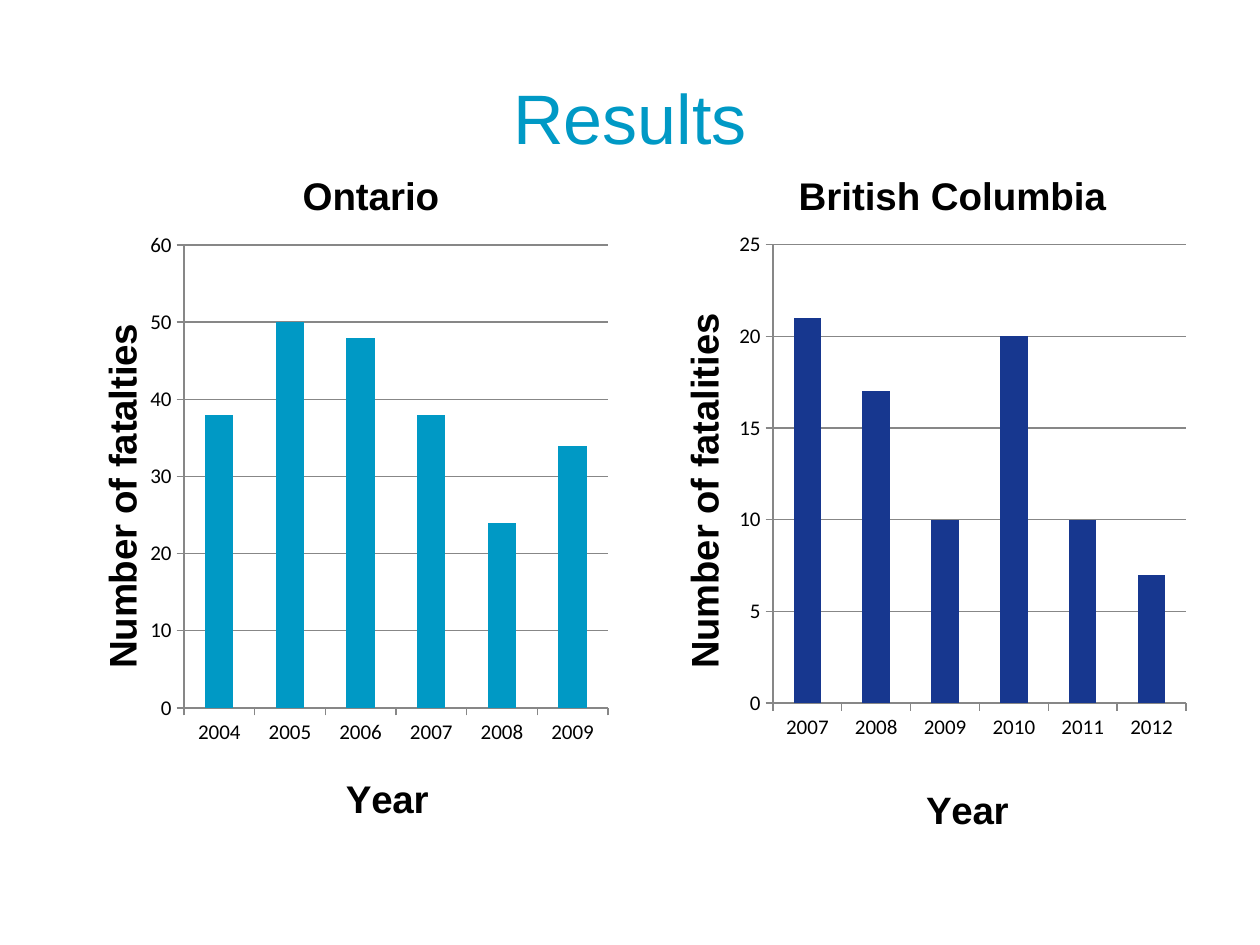
from dataclasses import dataclass
from lxml.etree import SubElement
from pptx import Presentation
from pptx.chart.data import CategoryChartData
from pptx.dml.color import RGBColor as RGB
from pptx.enum.chart import XL_CHART_TYPE as CT, XL_TICK_MARK as TICK
from pptx.enum.text import MSO_ANCHOR as ANCHOR, PP_ALIGN as ALIGN
from pptx.oxml.ns import qn
from pptx.util import Emu, Pt


@dataclass(frozen=True)
class Theme:
    cyan: RGB = RGB(0x00, 0x99, 0xC5)
    navy: RGB = RGB(0x17, 0x37, 0x8F)
    black: RGB = RGB(0, 0, 0)
    grey: RGB = RGB(0x87, 0x87, 0x87)
    heading_font: str = "Arial"
    chart_font: str = "Calibri"
    title_size: int = 40
    heading_size: int = 22
    tick_size: int = 12


THEME = Theme()
TITLE = ("Results", (63, 38, 1134, 158))
CHARTS = [
    dict(heading="Ontario", heading_box=(234, 165, 274, 60), color=THEME.cyan,
         left=63, first_year=2004, values=[38, 50, 48, 38, 24, 34],
         top_value=60, step=10, y_title="Number of fatalties",
         plot=(184, 245, 424, 463), x_title_at=(339, 768), y_title_at=(91, 317)),
    dict(heading="British Columbia", heading_box=(674, 165, 557, 60), color=THEME.navy,
         left=640, first_year=2007, values=[21, 17, 10, 20, 10, 7],
         top_value=25, step=5, y_title="Number of fatalities",
         plot=(773, 245, 413, 463), x_title_at=(919, 785), y_title_at=(673, 311)),
]
CHART_TOP, CHART_W, CHART_H = 220, 557, 624


def px(n):
    return Emu(round(n * 914400 / 126))


def style(font, size, color, bold=False, name=THEME.heading_font):
    font.name, font.size, font.bold = name, Pt(size), bold
    font.color.rgb = color


def add_text(slide, text, box, size, color, bold=False):
    tf = slide.shapes.add_textbox(*map(px, box)).text_frame
    tf.word_wrap = True
    tf.vertical_anchor = ANCHOR.MIDDLE
    p = tf.paragraphs[0]
    p.text, p.alignment = text, ALIGN.CENTER
    style(p.font, size, color, bold)


def set_layout(parent, index, left, box):
    for old in parent.findall(qn("c:layout")):
        parent.remove(old)
    layout = SubElement(parent, qn("c:layout"))
    parent.insert(index, layout)
    manual = SubElement(layout, qn("c:manualLayout"))
    items = [("layoutTarget", "inner")] if len(box) == 4 else []
    items += [("xMode", "edge"), ("yMode", "edge")]
    fractions = [(box[0] - left) / CHART_W, (box[1] - CHART_TOP) / CHART_H]
    if len(box) == 4:
        fractions += [box[2] / CHART_W, box[3] / CHART_H]
    items += zip("xywh", (f"{f:.4f}" for f in fractions))
    for tag, val in items:
        SubElement(manual, qn(f"c:{tag}")).set("val", val)


def style_axis(axis, title, left, title_at):
    axis.major_tick_mark, axis.minor_tick_mark = TICK.OUTSIDE, TICK.NONE
    style(axis.tick_labels.font, THEME.tick_size, THEME.black, name=THEME.chart_font)
    axis.format.line.color.rgb = THEME.grey
    axis.format.line.width = Pt(0.75)
    tf = axis.axis_title.text_frame
    p = tf.paragraphs[0]
    p.text = title
    style(p.font, THEME.heading_size, THEME.black, True)
    style(p.runs[0].font, THEME.heading_size, THEME.black, True)
    set_layout(axis.axis_title._element, 1, left, title_at)
    return tf


def add_bars(slide, c):
    data = CategoryChartData()
    data.categories = [str(c["first_year"] + i) for i in range(len(c["values"]))]
    data.add_series("Series 1", c["values"])
    left = c["left"]
    chart = slide.shapes.add_chart(
        CT.COLUMN_CLUSTERED, *map(px, (left, CHART_TOP, CHART_W, CHART_H)), data).chart
    chart.has_legend = chart.has_title = False
    style(chart.font, 10, THEME.black, name=THEME.chart_font)
    plot = chart.plots[0]
    plot.gap_width, plot.vary_by_categories = 150, False
    fill = plot.series[0].format.fill
    fill.solid()
    fill.fore_color.rgb = c["color"]

    style_axis(chart.category_axis, "Year", left, c["x_title_at"])
    axis = chart.value_axis
    tf = style_axis(axis, c["y_title"], left, c["y_title_at"])
    body = tf._txBody.find(qn("a:bodyPr"))
    body.set("rot", "-5400000")
    body.set("vert", "horz")
    axis.minimum_scale, axis.maximum_scale, axis.major_unit = 0, c["top_value"], c["step"]
    axis.has_major_gridlines = True
    line = axis.major_gridlines.format.line
    line.color.rgb, line.width = THEME.grey, Pt(0.75)
    set_layout(chart._chartSpace.find(".//" + qn("c:plotArea")), 0, left, c["plot"])


def main():
    prs = Presentation()
    prs.slide_width, prs.slide_height = px(1260), px(945)
    s = prs.slides.add_slide(prs.slide_layouts[6])
    add_text(s, *TITLE, THEME.title_size, THEME.cyan)
    for c in CHARTS:
        add_bars(s, c)
    for c in CHARTS:
        add_text(s, c["heading"], c["heading_box"], THEME.heading_size, THEME.black, True)
    prs.save("out.pptx")


if __name__ == "__main__":
    main()
